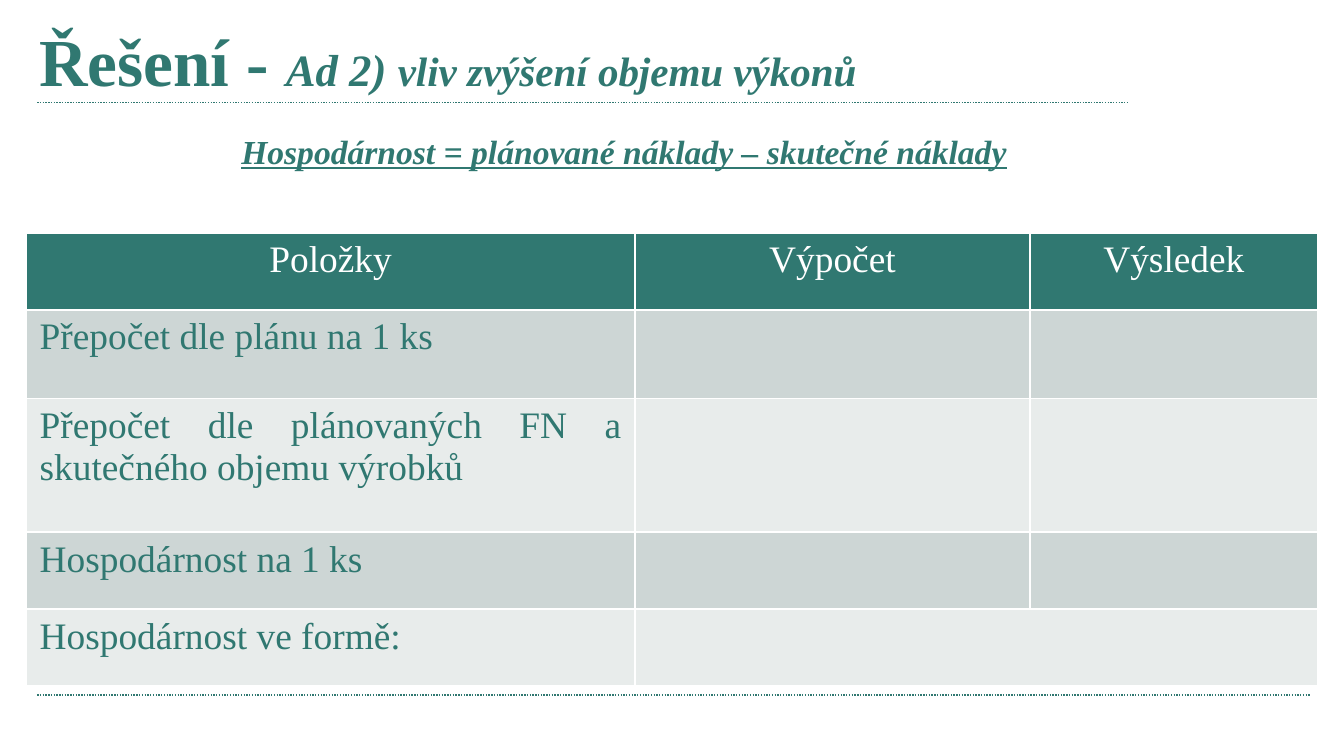
import dataclasses

import pptx
import pptx.dml.color
import pptx.enum.dml
import pptx.enum.shapes
import pptx.enum.text
import pptx.oxml
import pptx.oxml.ns
import pptx.util
from lxml import etree

ALIGN = pptx.enum.text.PP_ALIGN


@dataclasses.dataclass(frozen=True)
class Theme:
    font: str = "Times New Roman"
    teal: str = "307871"
    white: str = "FFFFFF"
    bands: tuple = ("CDD6D5", "E8ECEB")
    heading: int = 36
    topic: int = 24
    detail: int = 22
    formula: int = 18
    cell: int = 20
    rule: float = 0.75
    border: float = 1


def rgb(value):
    return pptx.dml.color.RGBColor.from_string(value)


class SlideBuilder:
    """Lengths are percentages of the slide's width and height."""

    def __init__(self, deck, theme):
        self.deck = deck
        self.theme = theme
        self.slide = deck.slides.add_slide(deck.slide_layouts[6])

    def x(self, share):
        return round(self.deck.slide_width * share / 100)

    def y(self, share):
        return round(self.deck.slide_height * share / 100)

    def area(self, left, top, width, height):
        return self.x(left), self.y(top), self.x(width), self.y(height)

    def style(self, run, size, color, bold=False, italic=False, underline=False):
        font = run.font
        font.name = self.theme.font
        font.size = pptx.util.Pt(size)
        font.color.rgb = rgb(color)
        font.bold, font.italic, font.underline = bold, italic, underline

    def rule(self, left, right, level):
        line = self.slide.shapes.add_connector(
            pptx.enum.shapes.MSO_CONNECTOR.STRAIGHT,
            self.x(left), self.y(level), self.x(right), self.y(level))
        line.line.color.rgb = rgb(self.theme.teal)
        line.line.width = pptx.util.Pt(self.theme.rule)
        line.line.dash_style = pptx.enum.dml.MSO_LINE.ROUND_DOT
        etree.SubElement(line._element.spPr, pptx.oxml.ns.qn("a:effectLst"))

    def text(self, area, pieces, align=ALIGN.LEFT, bottom_inset=0.9):
        frame = self.slide.shapes.add_textbox(*self.area(*area)).text_frame
        frame.word_wrap = True
        frame.vertical_anchor = pptx.enum.text.MSO_ANCHOR.MIDDLE
        frame.margin_bottom = self.y(bottom_inset)
        paragraph = frame.paragraphs[0]
        paragraph.alignment = align
        for words, size, flags in pieces:
            run = paragraph.add_run()
            run.text = words
            self.style(run, size, self.theme.teal, bold=True, **flags)

    def border(self, cell):
        properties = cell._tc.get_or_add_tcPr()
        for position, side in enumerate(("lnL", "lnR", "lnT", "lnB")):
            properties.insert(position, pptx.oxml.parse_xml(
                f'<a:{side} {pptx.oxml.ns.nsdecls("a")} '
                f'w="{pptx.util.Pt(self.theme.border)}"><a:solidFill>'
                f'<a:srgbClr val="{self.theme.white}"/></a:solidFill></a:{side}>'))

    def cell(self, cell, words, fill, color, align):
        cell.fill.solid()
        cell.fill.fore_color.rgb = rgb(fill)
        self.border(cell)
        if words:
            cell.text_frame.text = words
            paragraph = cell.text_frame.paragraphs[0]
            paragraph.alignment = align
            self.style(paragraph.runs[0], self.theme.cell, color)

    def table(self, left, top, widths, heights, header, items):
        theme = self.theme
        grid = self.slide.shapes.add_table(
            len(heights), len(widths),
            *self.area(left, top, sum(widths), sum(heights))).table
        for column, width in zip(grid.columns, widths):
            column.width = self.x(width)
        for row, height in zip(grid.rows, heights):
            row.height = self.y(height)
        for column, words in enumerate(header):
            self.cell(grid.cell(0, column), words, theme.teal, theme.white, ALIGN.CENTER)
        for row, (words, align) in enumerate(items, 1):
            for column in range(len(widths)):
                self.cell(grid.cell(row, column), "" if column else words,
                          theme.bands[(row - 1) % 2], theme.teal, align)
        return grid


def main():
    theme = Theme()
    deck = pptx.Presentation()
    deck.slide_width = pptx.util.Inches(10)
    deck.slide_height = deck.slide_width * 9 // 16
    page = SlideBuilder(deck, theme)

    page.rule(2.77, 83.87, 13.6)
    page.rule(2.77, 97.45, 91.95)
    page.text((1.95, 1.8, 88.2, 14), [
        ("Řešení - ", theme.heading, {}),
        ("Ad 2) ", theme.topic, {"italic": True}),
        ("vliv zvýšení objemu výkonů", theme.detail, {"italic": True}),
    ], bottom_inset=2.75)
    page.text((4.3, 16.4, 84.3, 7.1), [
        ("Hospodárnost = plánované náklady – skutečné náklady", theme.formula,
         {"italic": True, "underline": True}),
    ], ALIGN.CENTER)

    economy = page.table(
        1.95, 30.8, (45.3, 29.4, 21.4), (10.17, 11.77, 17.65, 10.17, 10.17),
        ("Položky", "Výpočet", "Výsledek"),
        [("Přepočet dle plánu na 1 ks", ALIGN.JUSTIFY),
         ("Přepočet dle plánovaných FN a skutečného objemu výrobků", ALIGN.JUSTIFY),
         ("Hospodárnost na 1 ks", ALIGN.LEFT),
         ("Hospodárnost ve formě:", ALIGN.LEFT)])
    economy.cell(4, 1).merge(economy.cell(4, 2))

    deck.save("out.pptx")


if __name__ == "__main__":
    main()
